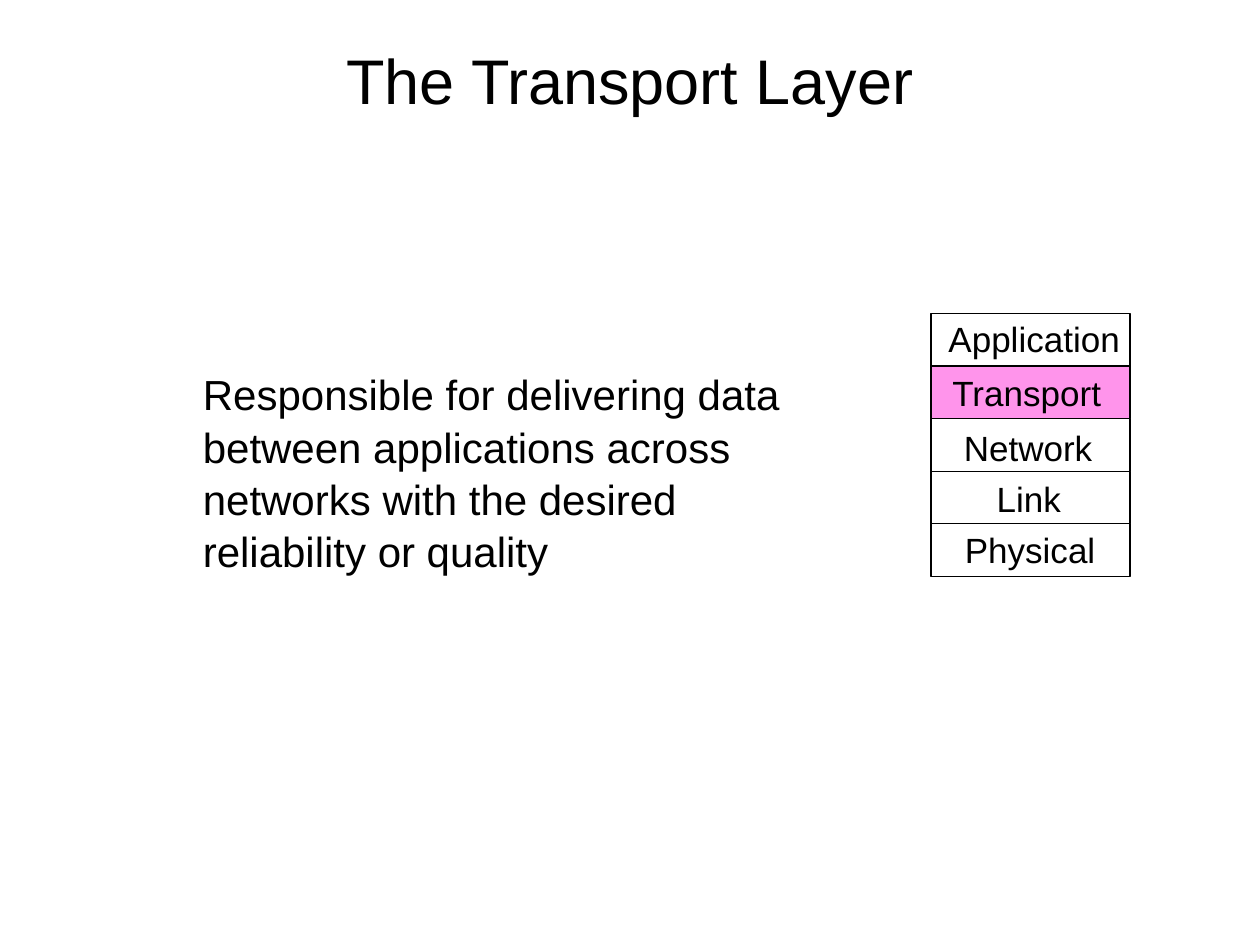
"""Build a slide that introduces the transport layer beside a protocol stack."""
from lxml import etree
from pptx import Presentation
from pptx import util as u
from pptx.dml.color import RGBColor
from pptx.enum import shapes, text
from pptx.oxml.ns import qn


def hue(code):
    return RGBColor.from_string(code)


def write(box, lines, size, wrap=True):
    frame = box.text_frame
    frame.word_wrap = wrap
    para = frame.paragraphs[0]
    for i, line in enumerate(lines):
        if i:
            para.add_line_break()
        run = para.add_run()
        run.text = line
        run.font.name = "Arial"
        run.font.size = u.Pt(size)
        run.font.color.rgb = hue("000000")
    return para


deck = Presentation()
deck.slide_width, deck.slide_height = u.Cm(25.4), u.Cm(19.05)
slide = deck.slides.add_slide(deck.slide_layouts[6])
items = slide.shapes

title = items.add_textbox(0, 0, u.Cm(25.4), u.Cm(3.18))
title.text_frame.vertical_anchor = text.MSO_ANCHOR.MIDDLE
write(title, ["The Transport Layer"], 36).alignment = text.PP_ALIGN.CENTER

body = items.add_textbox(u.Cm(3.84), u.Cm(7.27), u.Cm(14.38), u.Cm(9.45))
lines = [
    "Responsible for delivering data between applications across networks with the desired ",
    "reliability or quality",
]
write(body, lines, 24).line_spacing = 1.04

layers = [
    ("Application", 18.87, 6.27, 3.96),
    ("Transport", 18.95, 7.37, 3.53),
    ("Network", 19.18, 8.48, 3.1),
    ("Link", 19.84, 9.5, 1.83),
    ("Physical", 19.2, 10.52, 3.15),
]
high = 1.06
for row, (name, left, top, wide) in enumerate(layers):
    cell = items.add_shape(
        shapes.MSO_SHAPE.RECTANGLE,
        u.Cm(18.77), u.Cm(6.32 + row * high), u.Cm(4.01), u.Cm(high),
    )
    cell.shadow.inherit = False
    cell.line.color.rgb = hue("000000")
    cell.line.width = u.Pt(0.75)
    if name == "Transport":
        cell.fill.solid()
        cell.fill.fore_color.rgb = hue("FF2BD8")
        tint = cell.fill._xPr.find(qn("a:solidFill"))[0]
        etree.SubElement(tint, qn("a:alpha"), val="50000")
    else:
        cell.fill.background()

for name, left, top, wide in layers:
    label = items.add_textbox(u.Cm(left), u.Cm(top), u.Cm(wide), u.Cm(1.09))
    label.text_frame.auto_size = text.MSO_AUTO_SIZE.SHAPE_TO_FIT_TEXT
    write(label, [name], 20, wrap=False)

deck.save("out.pptx")
